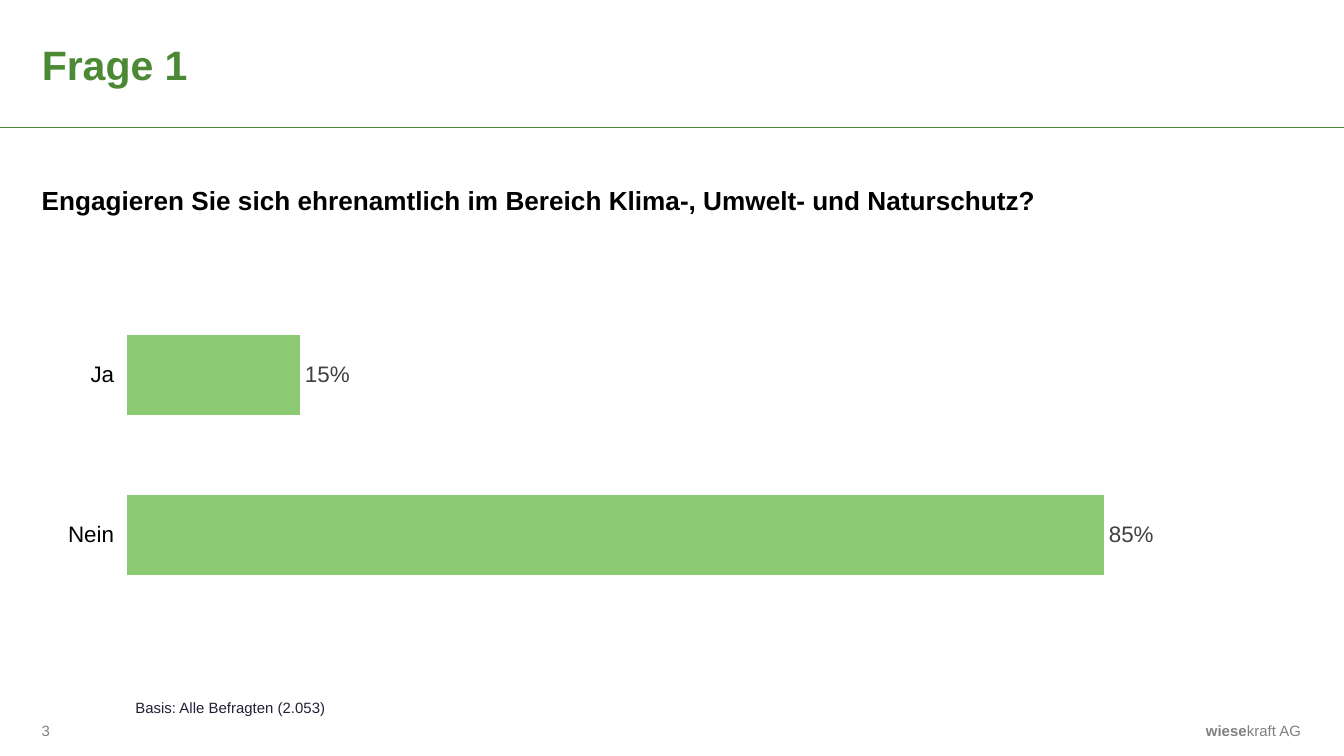
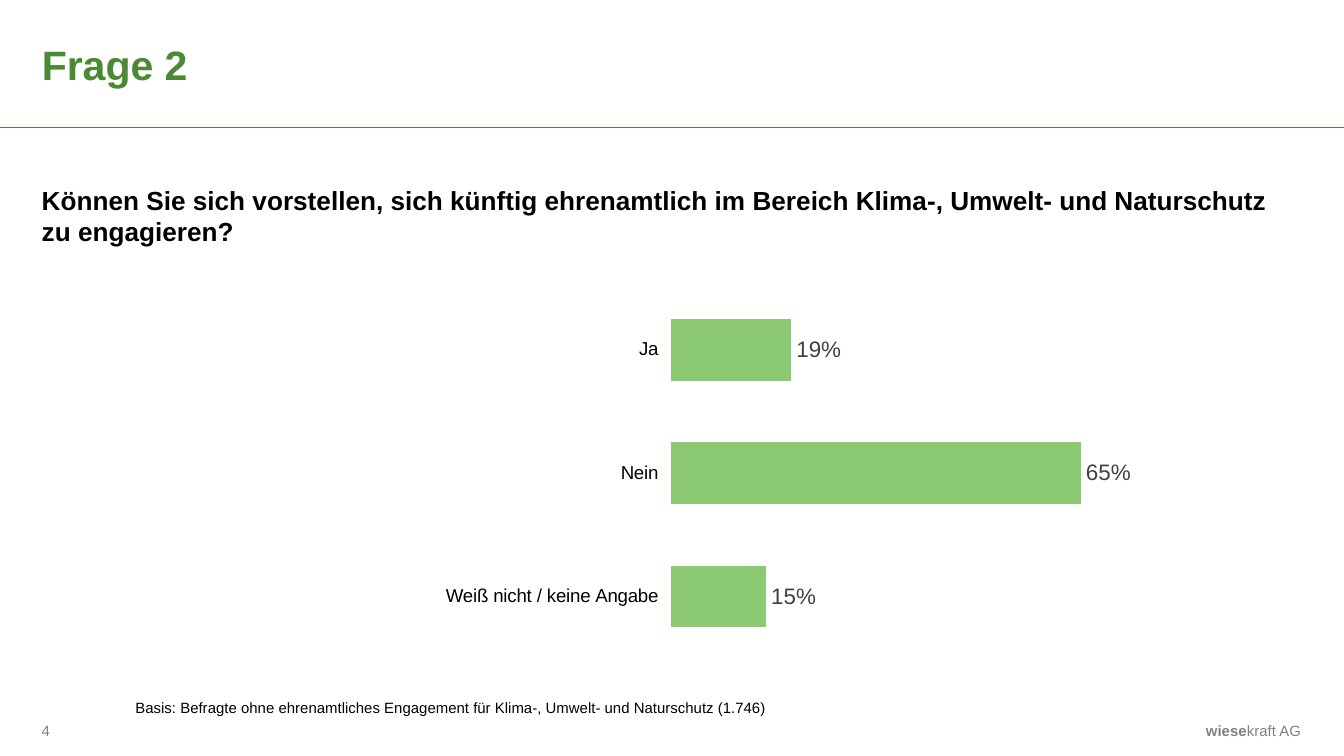
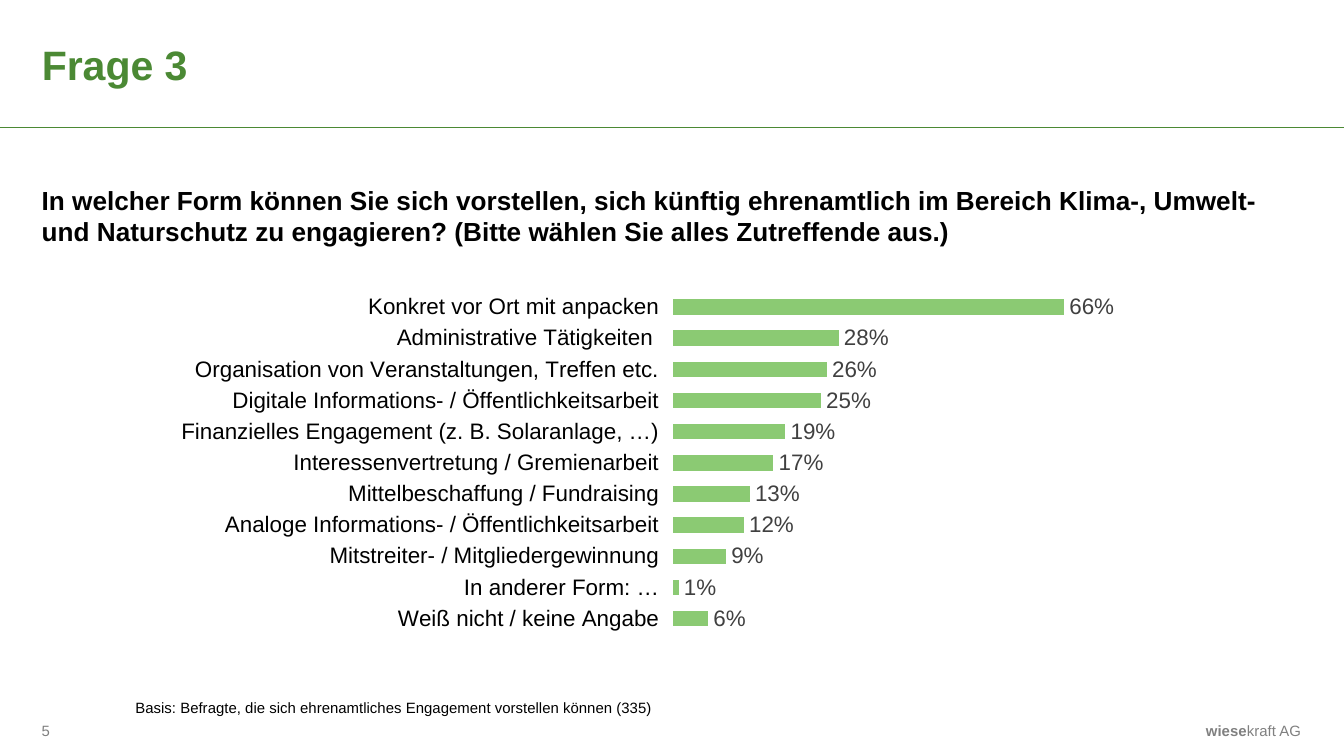
from lxml import etree
from pptx import Presentation
from pptx.chart.data import CategoryChartData
from pptx.dml.color import RGBColor
from pptx.enum import chart as ch, shapes, text
from pptx.oxml import ns
from pptx.util import Cm, Pt

FONT = "Arial"
GREEN = RGBColor(0x4B, 0x89, 0x34)
BAR_GREEN = RGBColor(0x8B, 0xCA, 0x73)
GREY = RGBColor(0x80, 0x80, 0x80)
CHART_GREY = RGBColor(0xB5, 0xB5, 0xB5)
LABEL_GREY = RGBColor(0x40, 0x40, 0x40)
BLACK = RGBColor(0, 0, 0)
INK = RGBColor(0x24, 0x1D, 0x36)

SLIDE_W, SLIDE_H = Cm(25.4), Cm(14.29)
MARGIN, CONTENT_W = Cm(0.79), Cm(23.8)
FIRST_PAGE = 3

# Each plot is (x, y, width, height) as fractions of its chart.
QUESTIONS = [
    dict(
        title="Frage 1",
        question="Engagieren Sie sich ehrenamtlich im Bereich Klima-, "
                 "Umwelt- und Naturschutz?",
        question_h=Cm(1.24),
        answers={"Ja": 0.15, "Nein": 0.85},
        chart_top=Cm(5.46), chart_h=Cm(6.3),
        plot=(0.068, 0.018, 0.912, 0.96), axis_size=12,
        basis="Basis: Alle Befragten (2.053)", basis_color=INK,
    ),
    dict(
        title="Frage 2",
        question="Können Sie sich vorstellen, sich künftig ehrenamtlich im Bereich "
                 "Klima-, Umwelt- und Naturschutz zu engagieren?",
        question_h=Cm(1.73),
        answers={"Ja": 0.19, "Nein": 0.65, "Weiß nicht / keine Angabe": 0.15},
        chart_top=Cm(4.93), chart_h=Cm(8.03),
        plot=(0.5, 0.064, 0.5, 0.872), axis_size=10,
        basis="Basis: Befragte ohne ehrenamtliches Engagement für Klima-, "
              "Umwelt- und Naturschutz (1.746)",
        basis_color=BLACK,
    ),
    dict(
        title="Frage 3",
        question="In welcher Form können Sie sich vorstellen, sich künftig "
                 "ehrenamtlich im Bereich Klima-, Umwelt- und Naturschutz zu "
                 "engagieren? (Bitte wählen Sie alles Zutreffende aus.)",
        question_h=Cm(1.78),
        answers={
            "Konkret vor Ort mit anpacken": 0.66,
            "Administrative Tätigkeiten ": 0.28,
            "Organisation von Veranstaltungen, Treffen etc.": 0.26,
            "Digitale Informations- / Öffentlichkeitsarbeit": 0.25,
            "Finanzielles Engagement (z. B. Solaranlage, …)": 0.19,
            "Interessenvertretung / Gremienarbeit": 0.17,
            "Mittelbeschaffung / Fundraising": 0.13,
            "Analoge Informations- / Öffentlichkeitsarbeit": 0.12,
            "Mitstreiter- / Mitgliedergewinnung": 0.09,
            "In anderer Form: …": 0.01,
            "Weiß nicht / keine Angabe": 0.06,
        },
        chart_top=Cm(5.51), chart_h=Cm(7.44),
        plot=(0.501, 0, 0.471, 0.871), axis_size=12,
        basis="Basis: Befragte, die sich ehrenamtliches Engagement vorstellen "
              "können (335)",
        basis_color=BLACK,
    ),
]


def style_font(font, size, color, bold=False):
    font.name, font.size, font.bold = FONT, Pt(size), bold
    font.color.rgb = color


def set_frame(tf, insets=(0, 0, 0, 0), anchor=text.MSO_ANCHOR.TOP):
    """Set insets (left, top, right, bottom) and anchor of a wrapping frame."""
    tf.word_wrap = True
    tf.auto_size = text.MSO_AUTO_SIZE.NONE
    tf.vertical_anchor = anchor
    tf.margin_left, tf.margin_top, tf.margin_right, tf.margin_bottom = insets


def add_text(s, box, content, size, color, bold=False, **frame):
    tf = s.shapes.add_textbox(*box).text_frame
    set_frame(tf, **frame)
    p = tf.paragraphs[0]
    p.text = content
    style_font(p.runs[0].font, size, color, bold)
    return p


def add_header(s, title, box):
    sp = s.shapes.title
    sp.left, sp.top, sp.width, sp.height = box
    tf = sp.text_frame
    tf.text = title
    set_frame(tf, anchor=text.MSO_ANCHOR.MIDDLE)
    p = tf.paragraphs[0]
    p.alignment = text.PP_ALIGN.LEFT
    style_font(p.runs[0].font, 22, GREEN, bold=True)

    rule_y = box[1] + Cm(1.65)
    rule = s.shapes.add_connector(shapes.MSO_CONNECTOR.STRAIGHT,
                                  0, rule_y, SLIDE_W, rule_y)
    rule.line.color.rgb = GREEN
    rule.line.width = Pt(1)
    etree.SubElement(rule._element.spPr, ns.qn("a:effectLst"))


def add_footer(s, page, box):
    """Place the page number at the left and the sender at the right of box."""
    left, top, width, height = box
    middle = text.MSO_ANCHOR.MIDDLE
    add_text(s, (left, top + Cm(0.08), Cm(0.71), Cm(0.43)), str(page), 8, GREY,
             anchor=middle)
    sender_w = Cm(2.18)
    p = add_text(s, (left + width - sender_w, top, sender_w, height),
                 "wiese", 8, GREY, bold=True, anchor=middle,
                 insets=(Cm(0.25), Cm(0.13), 0, Cm(0.13)))
    p.alignment = text.PP_ALIGN.RIGHT
    r = p.add_run()
    r.text = "kraft AG"
    style_font(r.font, 8, GREY)


def set_plot_area(chart, fractions):
    """Fix the inner plot area at (x, y, width, height) of the chart."""
    plot_area = chart._chartSpace.chart.plotArea
    for old in plot_area.findall(ns.qn("c:layout")):
        plot_area.remove(old)
    layout = etree.Element(ns.qn("c:layout"))
    manual = etree.SubElement(layout, ns.qn("c:manualLayout"))
    settings = [("layoutTarget", "inner"), ("xMode", "edge"), ("yMode", "edge")]
    settings += zip("xywh", fractions)
    for tag, value in settings:
        etree.SubElement(manual, ns.qn("c:" + tag)).set("val", str(value))
    plot_area.insert(0, layout)


def add_answer_chart(s, box, answers, fractions, axis_size):
    data = CategoryChartData(number_format="0%")
    data.categories = list(answers)
    data.add_series("Series 1", list(answers.values()))
    chart = s.shapes.add_chart(ch.XL_CHART_TYPE.BAR_CLUSTERED, *box, data).chart
    chart.has_title = chart.has_legend = False
    style_font(chart.font, 18, CHART_GREY)

    axis = chart.category_axis
    axis.reverse_order = True
    axis.tick_label_position = ch.XL_TICK_LABEL_POSITION.LOW
    axis.major_tick_mark = axis.minor_tick_mark = ch.XL_TICK_MARK.NONE
    axis.format.line.fill.background()
    style_font(axis.tick_labels.font, axis_size, BLACK)

    axis = chart.value_axis
    axis.visible = axis.has_major_gridlines = False
    axis.minimum_scale, axis.maximum_scale, axis.major_unit = 0, 1, 0.1

    plot = chart.plots[0]
    plot.gap_width, plot.overlap = 100, -10
    plot.vary_by_categories = False
    fill = plot.series[0].format.fill
    fill.solid()
    fill.fore_color.rgb = BAR_GREEN
    plot.has_data_labels = True
    labels = plot.data_labels
    labels.show_value = True
    labels.number_format, labels.number_format_is_linked = "0%", False
    labels.position = ch.XL_LABEL_POSITION.OUTSIDE_END
    style_font(labels.font, 12, LABEL_GREY)
    set_plot_area(chart, fractions)


def add_question_slide(prs, page, q):
    s = prs.slides.add_slide(prs.slide_layouts[5])
    add_header(s, q["title"], (MARGIN, Cm(0.76), CONTENT_W, Cm(0.89)))
    p = add_text(s, (MARGIN, Cm(3.2), CONTENT_W, q["question_h"]),
                 q["question"], 14, BLACK, bold=True, insets=(0, Cm(0.28), 0, 0))
    p.space_after = Pt(6)
    add_answer_chart(s, (MARGIN, q["chart_top"], CONTENT_W, q["chart_h"]),
                     q["answers"], q["plot"], q["axis_size"])
    basis_x = Cm(2.31)
    add_text(s, (basis_x, Cm(12.95), SLIDE_W - basis_x, Cm(0.84)),
             q["basis"], 8, q["basis_color"], insets=(Cm(0.25),) * 4)
    add_footer(s, page, (MARGIN, Cm(13.51), CONTENT_W, Cm(0.61)))


def main():
    prs = Presentation()
    prs.slide_width, prs.slide_height = SLIDE_W, SLIDE_H
    for page, q in enumerate(QUESTIONS, FIRST_PAGE):
        add_question_slide(prs, page, q)
    prs.save("out.pptx")


if __name__ == "__main__":
    main()
